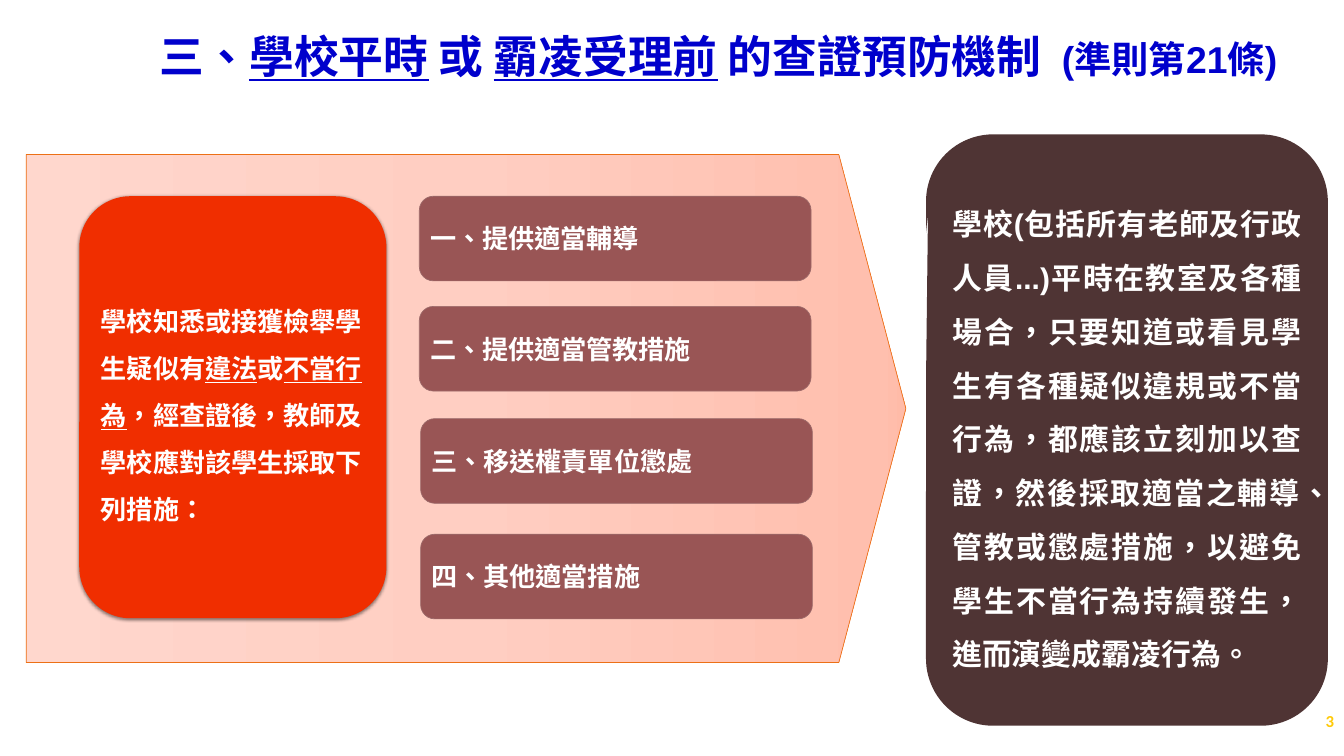
from copy import deepcopy

from lxml import etree
from pptx import Presentation
from pptx.dml.color import RGBColor
from pptx.enum import lang, shapes, text
from pptx.oxml import ns
from pptx.util import Inches, Pt

COLORS = {
    "title": "0000CC", "page": "FFCA08", "white": "FFFFFF",
    "arrow_line": "EC7016", "cause": "F02E00",
    "measure": "995555", "measure_line": "9C6A6A", "summary": "4F3434",
}
ARROW_STOPS = [(0, "FFD7CD"), (0.5, "FFCEC2"), (0.97, "FFBFAE"), (1, "FFBBA8")]


def write(shape, runs, font, color, align=text.PP_ALIGN.LEFT, spacing=None):
    """Fill a shape with one bold paragraph; runs are (words, size, underlined)."""
    frame = shape.text_frame
    frame.word_wrap = True
    frame.vertical_anchor = text.MSO_ANCHOR.MIDDLE
    paragraph = frame.paragraphs[0]
    paragraph.alignment = align
    if spacing:
        paragraph.line_spacing = spacing
    for words, size, underlined in runs:
        run = paragraph.add_run()
        run.text = words
        run.font.name = font
        run.font.size = Pt(size)
        run.font.bold = True
        run.font.underline = underlined
        run.font.language_id = lang.MSO_LANGUAGE_ID.TRADITIONAL_CHINESE
        run.font.color.rgb = RGBColor.from_string(COLORS[color])
    return paragraph


def add_block(parent, kind, box, fill=None, line=None):
    shape = parent.add_shape(kind, *map(Inches, box))
    shape.shadow.inherit = False
    if fill:
        shape.fill.solid()
        shape.fill.fore_color.rgb = RGBColor.from_string(COLORS[fill])
    if line:
        shape.line.color.rgb = RGBColor.from_string(COLORS[line])
        shape.line.width = Pt(0.75)
    else:
        shape.line.fill.background()
    return shape


prs = Presentation()
prs.slide_width, prs.slide_height = Inches(20), Inches(11.25)
slide = prs.slides.add_slide(prs.slide_layouts[6])
kinds = shapes.MSO_SHAPE

page_number = slide.shapes.add_textbox(Inches(17.44), Inches(10.43), Inches(2.51), Inches(0.6))
write(page_number, [("3", 18, False)], "Calibri", "page", text.PP_ALIGN.RIGHT)

title = slide.shapes.add_textbox(Inches(2.28), Inches(0.11), Inches(17.17), Inches(1.42))
write(title, [
    ("三、", 48, False),
    ("學校平時", 48, True),
    (" 或 ", 48, False),
    ("霸凌受理前", 48, True),
    (" 的查證預防機制  ", 48, False),
    ("(準則第21條)", 40, False),
], "Arial", "title")

# Process arrow with the cause and the four measures
process = slide.shapes.add_group_shape().shapes
arrow = add_block(process, kinds.PENTAGON, (0.39, 2.3, 13.09, 7.56), line="arrow_line")
arrow.adjustments[0] = 0.132
arrow.fill.gradient()
arrow.fill.gradient_angle = 0
stop_list = arrow.element.spPr.find(".//" + ns.qn("a:gsLst"))
for stop in list(stop_list):
    stop_list.append(deepcopy(stop))
for stop, (position, color) in zip(arrow.fill.gradient_stops, ARROW_STOPS):
    stop.position = position
    stop.color.rgb = RGBColor.from_string(color)

cause = add_block(process, kinds.ROUNDED_RECTANGLE, (1.18, 2.92, 4.57, 6.28), "cause")
shadow = etree.SubElement(
    cause.element.spPr.find(ns.qn("a:effectLst")), ns.qn("a:outerShdw"),
    blurRad=str(Pt(3.5)), dist=str(Pt(1.1)), dir="5400000", rotWithShape="0")
shadow_color = etree.SubElement(shadow, ns.qn("a:srgbClr"), val="000000")
etree.SubElement(shadow_color, ns.qn("a:alpha"), val="45000")
write(cause, [
    ("學校知悉或接獲檢舉學生疑似有", 28, False),
    ("違法", 28, True),
    ("或", 28, False),
    ("不當行為", 28, True),
    ("，經查證後，教師及學校應對該學生採取下列措施：", 28, False),
], "Calibri", "white", spacing=1.5)

for left, top, words in [
    (6.24, 2.92, "一、提供適當輔導"),
    (6.24, 4.56, "二、提供適當管教措施"),
    (6.26, 6.23, "三、移送權責單位懲處"),
    (6.26, 7.95, "四、其他適當措施"),
]:
    measure = add_block(process, kinds.ROUNDED_RECTANGLE, (left, top, 5.83, 1.26),
                        "measure", "measure_line")
    write(measure, [(words, 28, False)], "Calibri", "white")

# Summary callout
summary = add_block(slide.shapes, kinds.ROUNDED_RECTANGULAR_CALLOUT,
                    (13.78, 2, 5.98, 8.8), "summary")
for index, value in enumerate((-0.495, -0.367, 0.167)):
    summary.adjustments[index] = value
advice = write(summary, [(
    "學校(包括所有老師及行政人員...)平時在教室及各種場合，"
    "只要知道或看見學生有各種疑似違規或不當行為，都應該立刻加以查證，"
    "然後採取適當之輔導、管教或懲處措施，以避免學生不當行為持續發生，"
    "進而演變成霸凌行為。", 32, False,
)], "Arial", "white", text.PP_ALIGN.JUSTIFY, 1.5)
advice.space_before = Pt(12)

prs.save("out.pptx")
